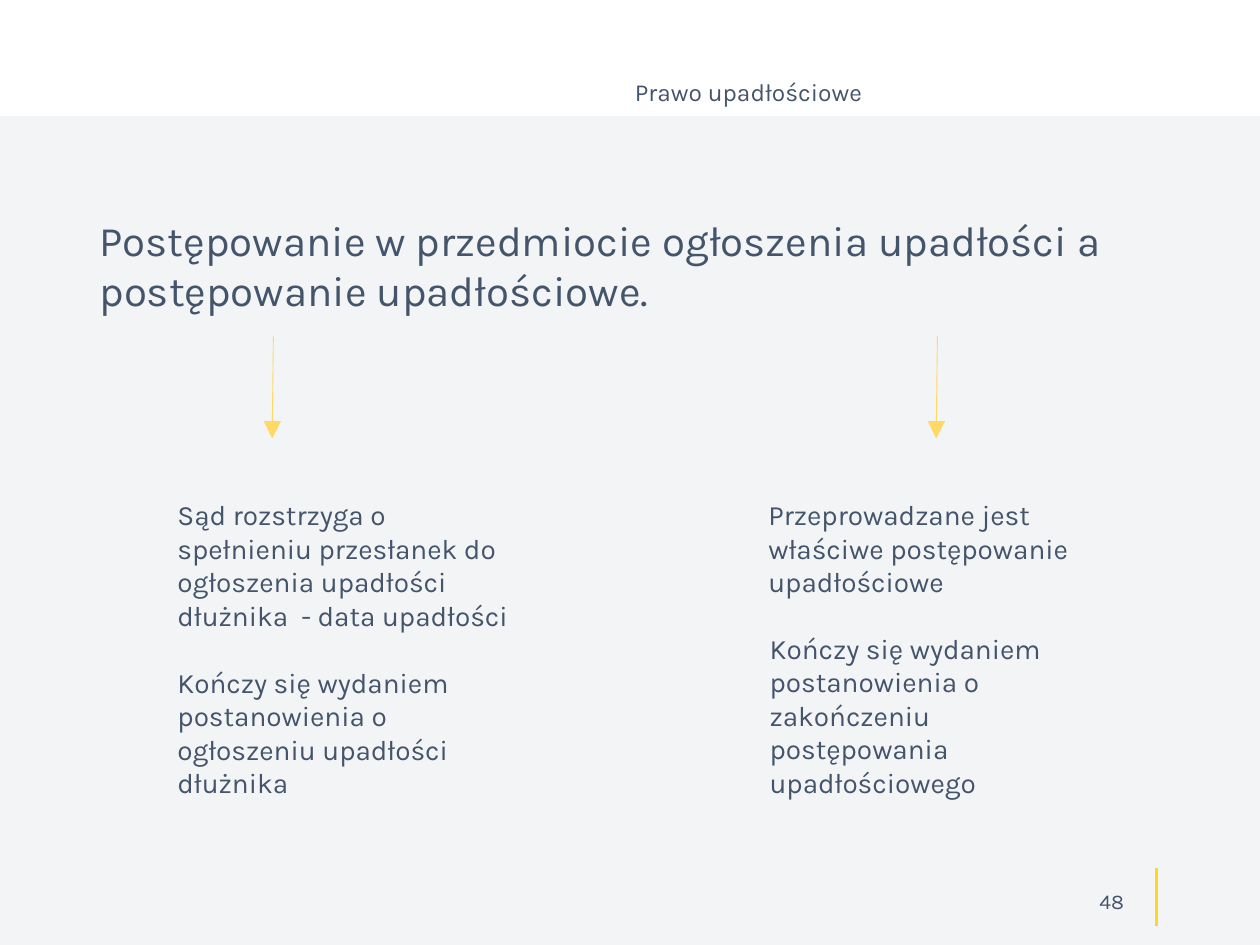
from lxml.etree import SubElement
from pptx import Presentation
from pptx.dml.color import RGBColor
from pptx.enum.shapes import MSO_CONNECTOR as Connector, MSO_SHAPE as Shape
from pptx.enum.text import MSO_ANCHOR as Anchor, MSO_AUTO_SIZE as AutoSize, PP_ALIGN as Align
from pptx.oxml.ns import qn
from pptx.util import Inches, Pt

WIDTH, HEIGHT = 10, 7.5
FONT, INK, PANEL, ACCENT, ARROW = "Karla", "44546A", "F2F4F6", "FCD91D", "FFD966"
HEADER = "Prawo upadłościowe"
TITLE = "Postępowanie w przedmiocie ogłoszenia upadłości a postępowanie upadłościowe."
PAGE = "48"
BODY_TOP, ARROW_TOP, ARROW_BOTTOM = 3.9, 2.67, 3.48
ARROWS = [2.17, 7.44]
BODIES = [
    ((1.31, BODY_TOP, 2.91, 2.26), [
        "Sąd rozstrzyga o spełnieniu przesłanek do ogłoszenia upadłości dłużnika  - data upadłości",
        "Kończy się wydaniem postanowienia o ogłoszeniu upadłości dłużnika"]),
    ((6, BODY_TOP, 3.21, 0.9), ["Przeprowadzane jest właściwe postępowanie upadłościowe"]),
    ((6.01, 4.96, 2.85, 1.44), [
        "Kończy się wydaniem postanowienia o zakończeniu postępowania upadłościowego"]),
]


def color(value):
    """Turn a hex string into a colour."""
    return RGBColor.from_string(value)


def place(shape, box):
    """Set a shape's left, top, width and height in inches."""
    shape.left, shape.top, shape.width, shape.height = map(Inches, box)


def write(shape, paragraphs, size=16, align=Align.LEFT, anchor=Anchor.TOP, wrap=True, gap=0):
    """Fill a shape with formatted paragraphs."""
    frame = shape.text_frame
    frame.text = "\n".join(paragraphs)
    frame.word_wrap, frame.vertical_anchor, frame.auto_size = wrap, anchor, AutoSize.NONE
    for index, paragraph in enumerate(frame.paragraphs):
        paragraph.alignment = align
        paragraph.line_spacing = 1.0
        paragraph.space_before = Pt(gap if index else 0)
        font = paragraph.font
        font.name, font.size, font.color.rgb = FONT, Pt(size), color(INK)


def add_text(slide, box, paragraphs, **style):
    """Add a text box."""
    write(slide.shapes.add_textbox(*map(Inches, box)), paragraphs, **style)


def add_line(slide, start, end, stroke, width, arrow=False):
    """Add a straight line, with an arrowhead at its end if asked."""
    line = slide.shapes.add_connector(Connector.STRAIGHT, *map(Inches, start + end))
    line.line.color.rgb, line.line.width = color(stroke), Pt(width)
    if arrow:
        SubElement(line.line._get_or_add_ln(), qn("a:tailEnd"), type="triangle", w="lg", len="lg")
    SubElement(line._element.spPr, qn("a:effectLst"))


def main():
    """Build the slide."""
    presentation = Presentation()
    presentation.slide_width, presentation.slide_height = Inches(WIDTH), Inches(HEIGHT)
    slide = presentation.slides.add_slide(presentation.slide_layouts[5])
    title = slide.shapes.title

    panel = slide.shapes.add_shape(Shape.RECTANGLE, 0, Inches(0.92), Inches(WIDTH), Inches(HEIGHT - 0.92))
    panel.shadow.inherit = False
    panel.fill.solid()
    panel.fill.fore_color.rgb = color(PANEL)
    panel.line.fill.background()
    title._element.addprevious(panel._element)

    place(title, (0.69, 1.65, 8.7, 0.91))
    write(title, [TITLE], size=24)
    add_line(slide, (9.18, 6.89), (9.18, 7.35), ACCENT, 1.5)
    add_text(slide, (7.06, 6.95, 1.96, 0.4), [PAGE], size=12, align=Align.RIGHT, anchor=Anchor.MIDDLE)
    for x in ARROWS:
        add_line(slide, (x, ARROW_TOP), (x - 0.01, ARROW_BOTTOM), ARROW, 0.5, arrow=True)
    for box, paragraphs in BODIES:
        add_text(slide, box, paragraphs, gap=19)
    add_text(slide, (4.94, 0.56, 2.01, 0.34), [HEADER], size=14, wrap=False)
    presentation.save("out.pptx")


if __name__ == "__main__":
    main()
